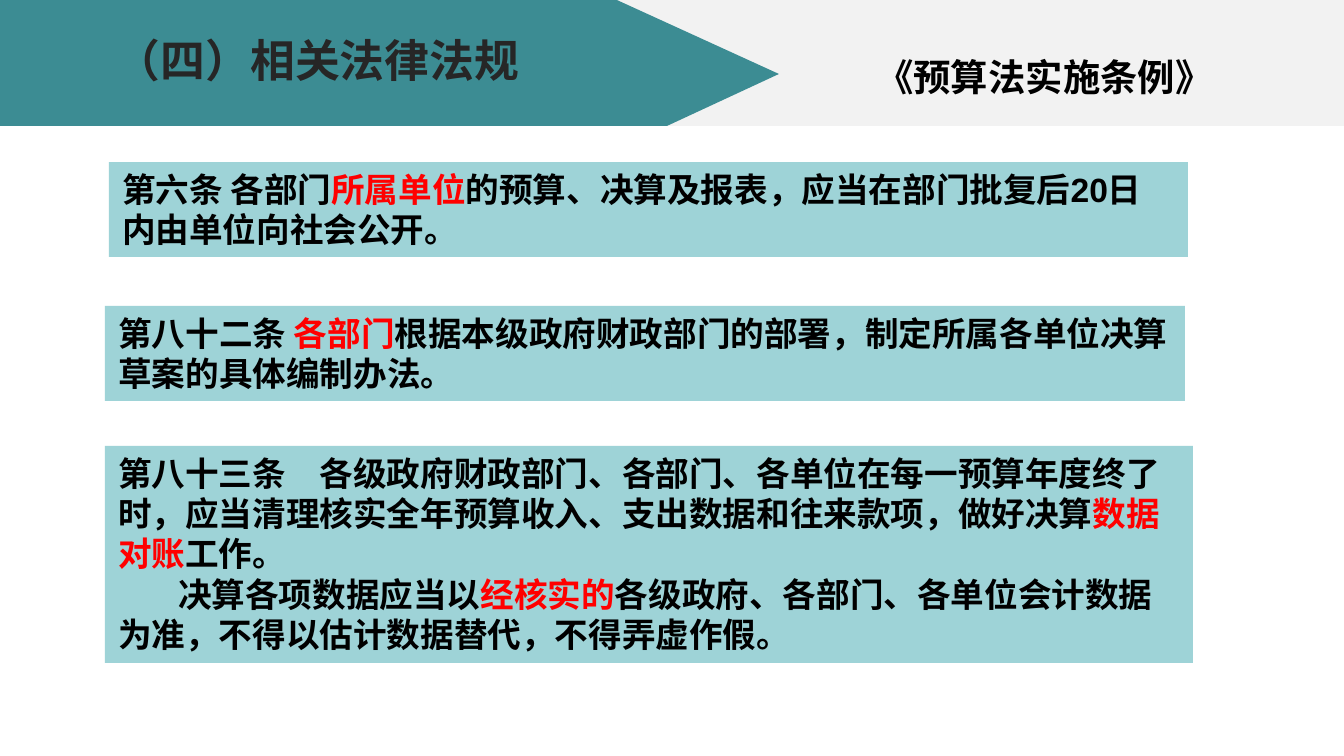
import pptx
import pptx.dml.color
import pptx.enum.shapes
import pptx.enum.text
import pptx.util

PX = 914400 / 134.4
TEAL, PALE, GREY = "3C8C93", "9ED3D7", "F2F2F2"
BLACK, DARK, RED = "000000", "262626", "FF0000"
CJK = "Noto Sans CJK SC"
ALIGN = pptx.enum.text.PP_ALIGN


def px(n):
    return pptx.util.Emu(round(n * PX))


def rgb(value):
    return pptx.dml.color.RGBColor.from_string(value)


def paint(sp, color):
    sp.fill.solid()
    sp.fill.fore_color.rgb = rgb(color)
    sp.line.fill.background()
    sp.shadow.inherit = False


def add_rect(slide, box, color):
    kind = pptx.enum.shapes.MSO_SHAPE.RECTANGLE
    sp = slide.shapes.add_shape(kind, *map(px, box))
    paint(sp, color)
    return sp


def set_frame(tf, anchor):
    """Wrap the text and use the standard insets."""
    tf.word_wrap = True
    tf.vertical_anchor = anchor
    tf.margin_left = tf.margin_right = pptx.util.Inches(0.1)
    tf.margin_top = tf.margin_bottom = pptx.util.Inches(0.05)


def write(p, runs, size, font, align):
    """Fill a paragraph with (text, color) runs."""
    p.alignment = align
    p.font.size = pptx.util.Pt(size)
    p.font.name = font
    p.font.bold = True
    for text, color in runs:
        r = p.add_run()
        r.text = text
        r.font.color.rgb = rgb(color)


def add_header(slide, box, section, title):
    """Grey band, teal arrow, section name and slide title."""
    x, y, w, h = box
    add_rect(slide, (x + 258, y, w - 258, h), GREY)

    # Teal arrow
    fb = slide.shapes.build_freeform(x, y, scale=PX)
    fb.add_line_segments(
        [(x + 617, y), (x + 779, y + 74), (x + 667, y + h), (x, y + h)])
    paint(fb.convert_to_shape(), TEAL)

    # Title, brought in front of the band
    sp = slide.shapes.title
    slide.shapes._spTree.append(sp._element)
    sp.left, sp.top, sp.width, sp.height = map(px, (x + 781, y + 47, 527, 59))
    set_frame(sp.text_frame, pptx.enum.text.MSO_ANCHOR.MIDDLE)
    write(sp.text_frame.paragraphs[0], [(title, BLACK)], 20, CJK, ALIGN.CENTER)

    # Section name
    sp = slide.shapes.add_textbox(*map(px, (x + 36, y + 26, 563, 67)))
    set_frame(sp.text_frame, pptx.enum.text.MSO_ANCHOR.TOP)
    write(sp.text_frame.paragraphs[0], [(section, DARK)], 24, CJK, ALIGN.CENTER)


def add_article(slide, box, paragraphs):
    """Pale panel with one article; later paragraphs are indented."""
    tf = add_rect(slide, box, PALE).text_frame
    set_frame(tf, pptx.enum.text.MSO_ANCHOR.TOP)
    for i, runs in enumerate(paragraphs):
        p = tf.add_paragraph() if i else tf.paragraphs[0]
        if i:
            p._p.get_or_add_pPr().set("indent", str(px(60)))
        write(p, runs, 18, "Arial", ALIGN.LEFT)


ARTICLES = [
    ((109, 162, 1079, 95), [
        [("第六条 各部门", BLACK), ("所属单位", RED),
         ("的预算、决算及报表，应当在部门批复后20日内由单位向社会公开。", BLACK)]]),
    ((105, 306, 1080, 95), [
        [("第八十二条 ", BLACK), ("各部门", RED),
         ("根据本级政府财政部门的部署，制定所属各单位决算草案的具体编制办法。", BLACK)]]),
    ((105, 446, 1088, 217), [
        [("第八十三条　各级政府财政部门、各部门、各单位在每一预算年度终了时，"
          "应当清理核实全年预算收入、支出数据和往来款项，做好决算", BLACK),
         ("数据对账", RED), ("工作。", BLACK)],
        [("决算各项数据应当以", BLACK), ("经核实的", RED),
         ("各级政府、各部门、各单位会计数据为准，不得以估计数据替代，不得弄虚作假。", BLACK)]]),
]


def main():
    prs = pptx.Presentation()
    prs.slide_width, prs.slide_height = px(1344), px(756)
    slide = prs.slides.add_slide(prs.slide_layouts[5])
    add_header(slide, (0, 0, 1344, 126), "（四）相关法律法规", "《预算法实施条例》")
    for box, paragraphs in ARTICLES:
        add_article(slide, box, paragraphs)
    prs.save("out.pptx")


if __name__ == "__main__":
    main()
